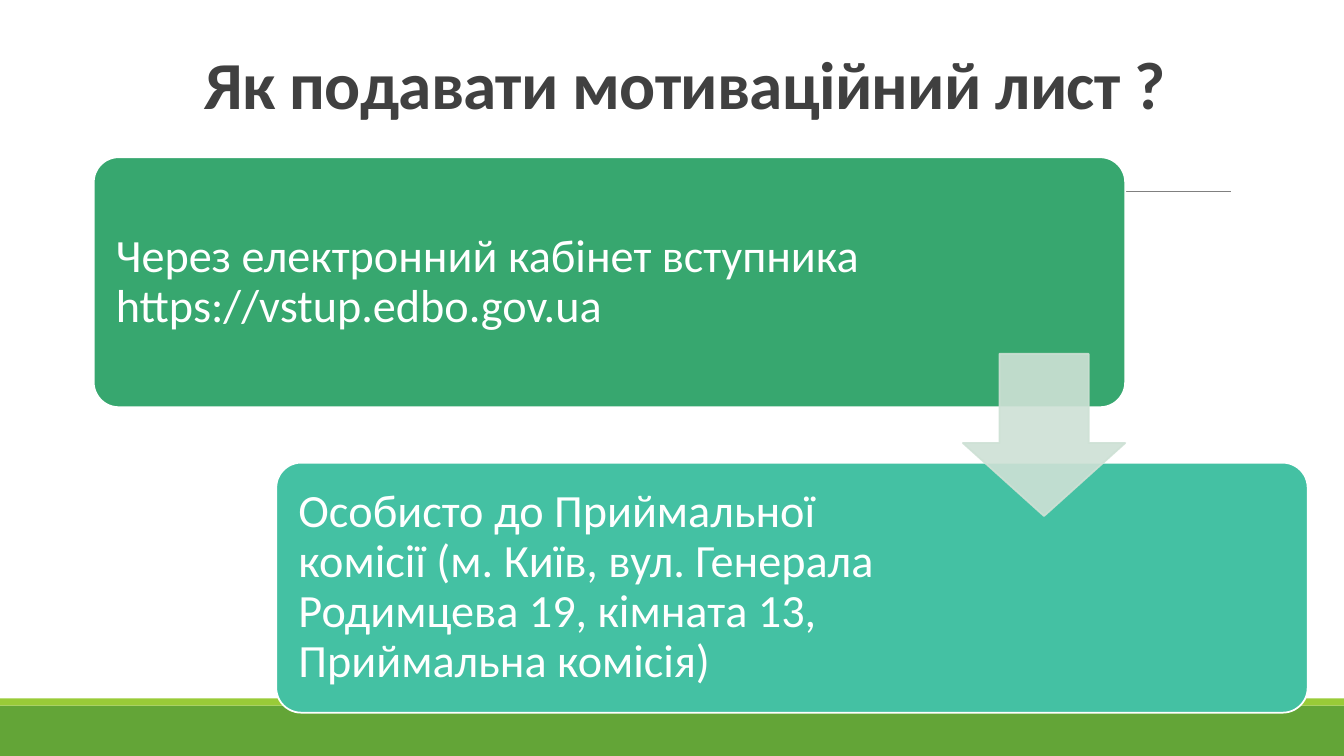
import pptx
import pptx.util
import pptx.dml.color
import pptx.enum.shapes
import pptx.enum.text
import pptx.oxml.ns
import pptx.oxml.xmlchemy

Inches = pptx.util.Inches
Pt = pptx.util.Pt
SHAPE = pptx.enum.shapes.MSO_SHAPE
ANCHOR = pptx.enum.text.MSO_ANCHOR
ALIGN = pptx.enum.text.PP_ALIGN

TITLE = "Як подавати мотиваційний лист ?"
STEPS = [
    ("Через електронний кабінет вступника https://vstup.edbo.gov.ua", 7.67),
    ("Особисто до Приймальної комісії (м. Київ, вул. Генерала Родимцева 19, "
     "кімната 13, Приймальна комісія)", 6.67),
]
COLORS = {
    "footer": "63A537", "stripe": "99CB38", "rule": "808080", "title": "404040",
    "white": "FFFFFF", "arrow": "CEE1D5", "steps": ["37A76F", "44C1A3"],
}
FONT = "Calibri"
CARD_LEFT, CARD_TOP, CARD_W, CARD_H = 0.93, 1.56, 10.23, 2.48
STEP_X, STEP_Y = 1.81, 3.03
PAD = 0.08
ARROW_SIZE = 1.61
ARROW_TOP = 3.51


def rgb(value):
    return pptx.dml.color.RGBColor.from_string(value)


def add_shape(s, kind, box, fill, line=None, adjustments=()):
    sp = s.shapes.add_shape(kind, *map(Inches, box))
    sp.shadow.inherit = False
    sp.fill.solid()
    sp.fill.fore_color.rgb = rgb(fill)
    if line:
        sp.line.color.rgb = rgb(line)
        sp.line.width = Pt(1.25)
    else:
        sp.line.fill.background()
    for i, value in enumerate(adjustments):
        sp.adjustments[i] = value
    return sp


def add_text(s, box, text, size, color, anchor, spacing, inset=None):
    tf = s.shapes.add_textbox(*map(Inches, box)).text_frame
    tf.word_wrap = True
    tf.vertical_anchor = anchor
    if inset is not None:
        tf.margin_left = tf.margin_right = Inches(inset)
        tf.margin_top = tf.margin_bottom = Inches(inset)
    p = tf.paragraphs[0]
    p.line_spacing = spacing
    p.font.name = FONT
    p.font.size = Pt(size)
    p.font.color.rgb = rgb(color)
    r = p.add_run()
    r.text = text
    return p


def add_rule(s):
    line = s.shapes.add_connector(
        pptx.enum.shapes.MSO_CONNECTOR.STRAIGHT,
        Inches(1.31), Inches(1.9), Inches(12.21), Inches(1.9))
    line.line.color.rgb = rgb(COLORS["rule"])
    line.line.width = Pt(0.5)
    line._element.spPr.append(pptx.oxml.xmlchemy.OxmlElement("a:effectLst"))


def add_arrow(s):
    box = (CARD_LEFT + CARD_W - ARROW_SIZE, ARROW_TOP, ARROW_SIZE, ARROW_SIZE)
    sp = add_shape(s, SHAPE.DOWN_ARROW, box, COLORS["arrow"], COLORS["arrow"], (0.55, 0.45))
    for color in sp._element.spPr.iter(pptx.oxml.ns.qn("a:srgbClr")):
        alpha = pptx.oxml.xmlchemy.OxmlElement("a:alpha")
        alpha.set("val", "90000")
        color.append(alpha)


def main():
    """Build the slide on how to submit a motivation letter."""
    prs = pptx.Presentation()
    prs.slide_width, prs.slide_height = Inches(13.33), Inches(7.5)
    s = prs.slides.add_slide(prs.slide_layouts[6])

    add_shape(s, SHAPE.RECTANGLE, (0, 7, 13.33, 0.5), COLORS["footer"])
    add_shape(s, SHAPE.RECTANGLE, (0, 6.93, 13.33, 0.07), COLORS["stripe"])
    add_rule(s)

    p = add_text(s, (1.91, -0.38, 9.77, 1.65), TITLE, 48, COLORS["title"], ANCHOR.BOTTOM, 0.85)
    p.alignment = ALIGN.CENTER
    p.font.bold = True
    p.runs[0]._r.get_or_add_rPr().set("spc", "-50")

    for i, (text, text_w) in enumerate(STEPS):
        left, top = CARD_LEFT + i * STEP_X, CARD_TOP + i * STEP_Y
        add_shape(s, SHAPE.ROUNDED_RECTANGLE, (left, top, CARD_W, CARD_H),
                  COLORS["steps"][i], COLORS["white"], (0.1,))
        add_text(s, (left + PAD, top + PAD, text_w, CARD_H - 2 * PAD), text, 33,
                 COLORS["white"], ANCHOR.MIDDLE, 0.9, 0.14)
    add_arrow(s)
    prs.save("out.pptx")


if __name__ == "__main__":
    main()
